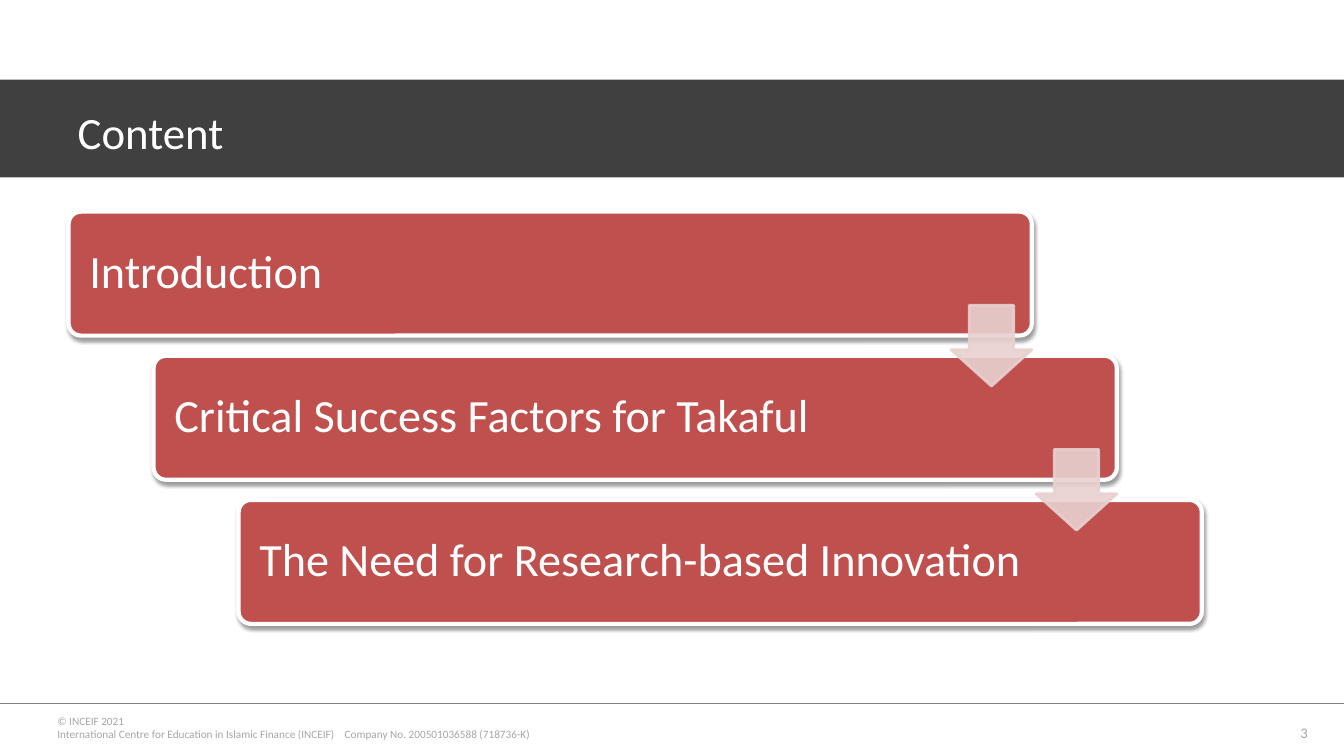
import pptx
import pptx.dml.color
import pptx.enum.shapes
import pptx.enum.text
import pptx.oxml
import pptx.oxml.ns
import pptx.util
from pptx.util import Inches

RGBColor = pptx.dml.color.RGBColor
SHAPE = pptx.enum.shapes.MSO_SHAPE
ALIGN = pptx.enum.text.PP_ALIGN
ANCHOR = pptx.enum.text.MSO_ANCHOR

WHITE = RGBColor(0xFF, 0xFF, 0xFF)
BAND_GREY = RGBColor(0x40, 0x40, 0x40)
RULE_GREY = RGBColor(0x80, 0x80, 0x80)
FOOTER_GREY = RGBColor(0xA6, 0xA6, 0xA6)
CARD_RED = RGBColor(0xC0, 0x50, 0x4D)
ARROW_PINK = RGBColor(0xE8, 0xD0, 0xD0)

SLIDE_W, SLIDE_H = 13.33, 7.5
TOPICS = [
    "Introduction",
    "Critical Success Factors for Takaful",
    "The Need for Research-based Innovation",
]
COPYRIGHT = [
    "© INCEIF 2021",
    "International Centre for Education in Islamic Finance (INCEIF)\t"
    "Company No. 200501036588 (718736-K)",
]


def add_xml(parent, xml):
    wrapper = pptx.oxml.parse_xml(f"<a:root {pptx.oxml.ns.nsdecls('a')}>{xml}</a:root>")
    parent.append(wrapper[0])


def write_text(frame, lines, size, color, align=ALIGN.LEFT, anchor=ANCHOR.MIDDLE,
               inset=None, line_spacing=None, tab=None):
    frame.word_wrap = True
    frame.auto_size = pptx.enum.text.MSO_AUTO_SIZE.NONE
    frame.vertical_anchor = anchor
    if inset is not None:
        frame.margin_left = frame.margin_right = Inches(inset)
        frame.margin_top = frame.margin_bottom = Inches(inset)
    for index, line in enumerate(lines):
        paragraph = frame.paragraphs[0] if index == 0 else frame.add_paragraph()
        paragraph.text = line
        paragraph.alignment = align
        paragraph.line_spacing = line_spacing
        if tab is not None:
            add_xml(paragraph._p.get_or_add_pPr(),
                    f'<a:tabLst><a:tab pos="{Inches(tab)}" algn="l"/></a:tabLst>')
        paragraph.font.name = "Calibri"
        paragraph.font.size = pptx.util.Pt(size)
        paragraph.font.color.rgb = color


def add_filled(slide, preset, left, top, width, height, fill, line=None, line_width=0):
    shape = slide.shapes.add_shape(
        preset, Inches(left), Inches(top), Inches(width), Inches(height))
    shape.shadow.inherit = False
    shape.fill.solid()
    shape.fill.fore_color.rgb = fill
    if line is None:
        shape.line.fill.background()
    else:
        shape.line.color.rgb = line
        shape.line.width = pptx.util.Pt(line_width)
    return shape


def add_header(slide, left, top, width, height):
    # Dark band, moved behind the title
    band = add_filled(slide, SHAPE.RECTANGLE, left, top, width, height, BAND_GREY)
    slide.shapes._spTree.insert(2, band._element)

    # Title
    title = slide.shapes.title
    title.left, title.top = Inches(left + 0.67), Inches(top - 0.11)
    title.width, title.height = Inches(width - 1.33), Inches(1.25)
    write_text(title.text_frame, ["Content"], 32, WHITE)


def add_card(slide, topic, left, top, width, height):
    card = add_filled(slide, SHAPE.ROUNDED_RECTANGLE, left, top, width, height,
                      CARD_RED, WHITE, 3)
    card.adjustments[0] = 0.1
    effects = card._element.spPr.find(pptx.oxml.ns.qn("a:effectLst"))
    add_xml(effects,
            f'<a:outerShdw blurRad="{pptx.util.Pt(3.1)}" dist="{pptx.util.Pt(1.6)}" '
            'dir="5400000" rotWithShape="0"><a:srgbClr val="000000">'
            '<a:alpha val="38000"/></a:srgbClr></a:outerShdw>')
    write_text(card.text_frame, [topic], 33, WHITE, inset=0.17, line_spacing=0.9)


def add_step_arrow(slide, left, top, size):
    arrow = add_filled(slide, SHAPE.DOWN_ARROW, left, top, size, size,
                       ARROW_PINK, ARROW_PINK, 2)
    arrow.adjustments[0] = 0.55
    arrow.adjustments[1] = 0.45
    for color in arrow._element.spPr.findall(".//" + pptx.oxml.ns.qn("a:srgbClr")):
        add_xml(color, '<a:alpha val="90000"/>')


def add_staircase(slide, left, top, width, height):
    card_w, card_h, arrow_size = 0.85 * width, 1.23, 0.8
    steps = len(TOPICS) - 1
    step_x = (width - card_w) / steps
    step_y = (height - card_h) / steps

    # Topic cards
    for index, topic in enumerate(TOPICS):
        add_card(slide, topic, left + index * step_x, top + index * step_y, card_w, card_h)

    # Arrows from each card to the next
    for index in range(steps):
        add_step_arrow(slide, left + index * step_x + card_w - arrow_size,
                       top + index * step_y + 0.93, arrow_size)


def add_footer(slide, left, top, width, height):
    # Rule
    rule = slide.shapes.add_connector(
        pptx.enum.shapes.MSO_CONNECTOR.STRAIGHT,
        Inches(left), Inches(top), Inches(left + width), Inches(top))
    rule.line.color.rgb = RULE_GREY
    rule.line.width = pptx.util.Pt(1)
    add_xml(rule._element.spPr, "<a:effectLst/>")

    # Copyright
    copyright_box = slide.shapes.add_textbox(
        Inches(left + 0.47), Inches(top), Inches(6.09), Inches(0.47))
    write_text(copyright_box.text_frame, COPYRIGHT, 8, FOOTER_GREY, tab=2.85)

    # Page number
    page_number = slide.shapes.add_textbox(
        Inches(left + width - 3.37), Inches(top + 0.15), Inches(3.11), Inches(height - 0.15))
    write_text(page_number.text_frame, ["3"], 10.5, FOOTER_GREY,
               align=ALIGN.RIGHT, anchor=ANCHOR.TOP)


def main():
    deck = pptx.Presentation()
    deck.slide_width, deck.slide_height = Inches(SLIDE_W), Inches(SLIDE_H)
    slide = deck.slides.add_slide(deck.slide_layouts.get_by_name("Title Only"))
    add_header(slide, 0, 0.79, SLIDE_W, 0.97)
    add_staircase(slide, 0.68, 2.1, 11.24, 4.09)
    add_footer(slide, 0, 6.98, SLIDE_W, SLIDE_H - 6.98)
    deck.save("out.pptx")


if __name__ == "__main__":
    main()
